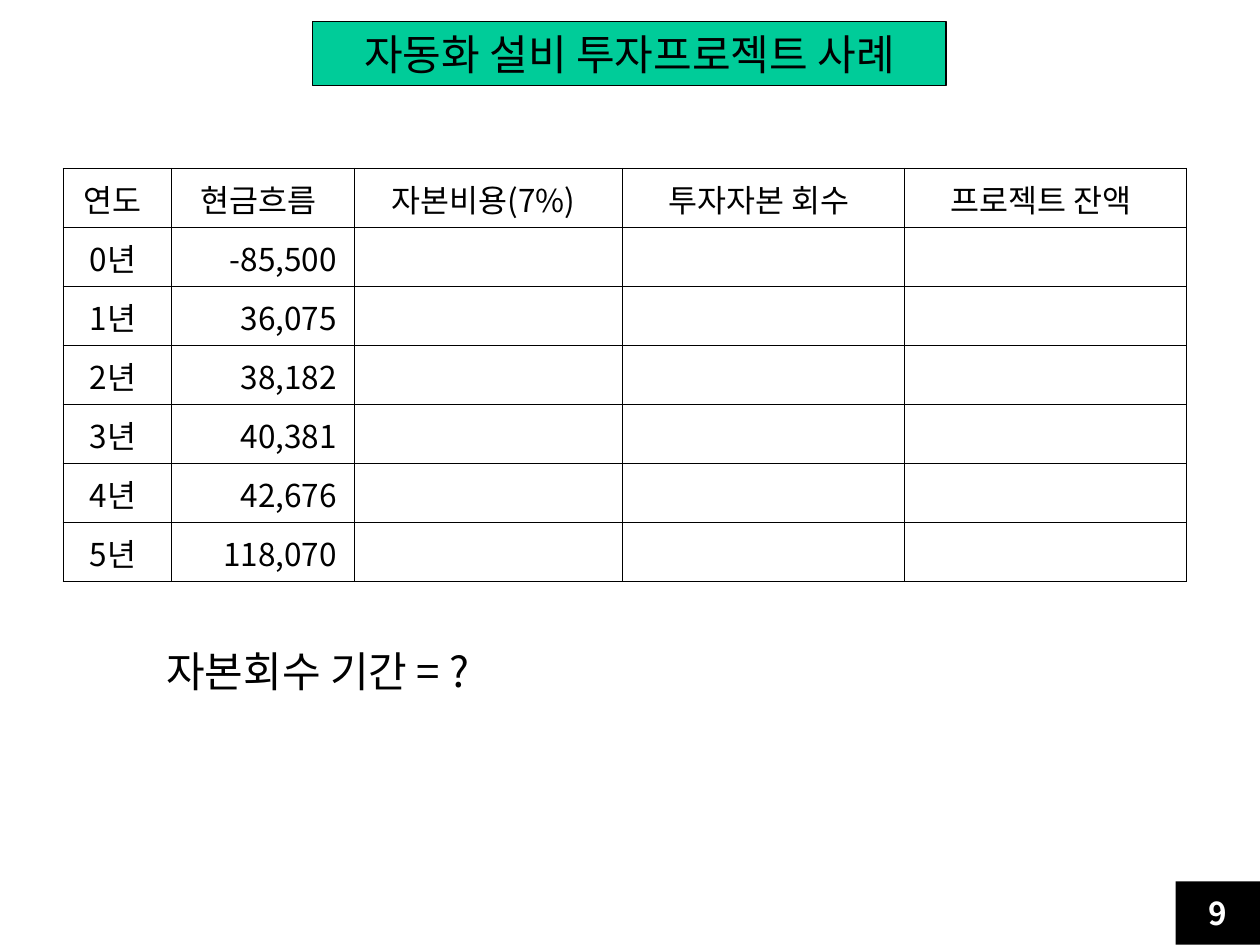
import lxml.etree
import pptx
import pptx.dml.color
import pptx.enum.shapes
import pptx.enum.text
import pptx.oxml
import pptx.oxml.ns
import pptx.util

FONT = "Noto Sans CJK KR"
ALIGN = pptx.enum.text.PP_ALIGN
MIDDLE = pptx.enum.text.MSO_ANCHOR.MIDDLE
WIDTH, HEIGHT = pptx.util.Inches(10), pptx.util.Inches(7.5)
HEADERS = ["연도", "현금흐름", "자본비용(7%)", "투자자본 회수", "프로젝트 잔액"]
COLUMN_SHARES = [0.86, 1.45, 2.13, 2.24, 2.24]
CASH_FLOWS = [-85500, 36075, 38182, 40381, 42676, 118070]


def color(hex_string):
    """Turn a hex string into a colour."""
    return pptx.dml.color.RGBColor.from_string(hex_string)


def box_at(left, top, width, height):
    """Turn shares of the slide's size into a box."""
    return tuple(int(share * side) for share, side in
                 zip((left, top, width, height), (WIDTH, HEIGHT) * 2))


def write(frame, text, size, align, hex_string="000000", bold=False):
    """Write one styled paragraph into a text frame."""
    paragraph = frame.paragraphs[0]
    paragraph.text = text
    paragraph.alignment = align
    font = paragraph.font
    font.size, font.bold, font.name = pptx.util.Pt(size), bold, FONT
    font.color.rgb = color(hex_string)
    properties = paragraph._p.pPr.find(pptx.oxml.ns.qn("a:defRPr"))
    east_asian = lxml.etree.SubElement(properties, pptx.oxml.ns.qn("a:ea"))
    east_asian.set("typeface", FONT)


def add_block(slide, box, fill, line=None):
    """Add a plain rectangle and return it."""
    shape = slide.shapes.add_shape(pptx.enum.shapes.MSO_SHAPE.RECTANGLE, *box)
    shape.shadow.inherit = False
    shape.fill.solid()
    shape.fill.fore_color.rgb = color(fill)
    if line:
        shape.line.color.rgb = color(line)
        shape.line.width = pptx.util.Pt(0.75)
    else:
        shape.line.fill.background()
    shape.text_frame.vertical_anchor = MIDDLE
    return shape


def add_title(slide, box):
    """Add the green title bar."""
    frame = add_block(slide, box, "00CC99", "000000").text_frame
    frame.word_wrap = False
    write(frame, "자동화 설비 투자프로젝트 사례", 24, ALIGN.CENTER)


def style_cell(cell):
    """Give a cell thin black borders, narrow margins and no fill."""
    cell.fill.background()
    cell.vertical_anchor = MIDDLE
    cell.margin_left = cell.margin_top = pptx.util.Inches(0.01)
    cell.margin_right, cell.margin_bottom = pptx.util.Inches(0.08), 0
    properties = cell._tc.get_or_add_tcPr()
    for index, side in enumerate(("lnL", "lnR", "lnT", "lnB")):
        border = pptx.oxml.parse_xml(
            f'<a:{side} {pptx.oxml.ns.nsdecls("a")} w="{pptx.util.Pt(0.5)}">'
            f'<a:solidFill><a:srgbClr val="000000"/></a:solidFill></a:{side}>')
        properties.insert(index, border)


def add_cash_flow_table(slide, box):
    """Add the yearly cash flow table with its blank working columns."""
    rows = [HEADERS] + [[f"{year}년", f"{flow:,} ", "", "", ""]
                        for year, flow in enumerate(CASH_FLOWS)]
    table = slide.shapes.add_table(len(rows), len(HEADERS), *box).table
    table.first_row = table.horz_banding = False
    for column, share in zip(table.columns, COLUMN_SHARES):
        column.width = int(box[2] * share / sum(COLUMN_SHARES))
    for row_index, values in enumerate(rows):
        table.rows[row_index].height = box[3] // len(rows)
        for column_index, text in enumerate(values):
            cell = table.cell(row_index, column_index)
            style_cell(cell)
            if text:
                is_amount = row_index > 0 and column_index == 1
                align = ALIGN.RIGHT if is_amount else ALIGN.CENTER
                write(cell.text_frame, text, 18, align)


def add_question(slide, box):
    """Add the payback period question."""
    frame = slide.shapes.add_textbox(*box).text_frame
    frame.word_wrap = False
    write(frame, "자본회수 기간 = ?", 24, ALIGN.LEFT)


def add_page_number(slide, box):
    """Add the black page number block."""
    frame = add_block(slide, box, "000000").text_frame
    write(frame, "9", 18, ALIGN.CENTER, "FFFFFF", bold=True)


def main():
    """Build and save the slide."""
    presentation = pptx.Presentation()
    presentation.slide_width, presentation.slide_height = WIDTH, HEIGHT
    slide = presentation.slides.add_slide(presentation.slide_layouts[6])
    add_title(slide, box_at(0.248, 0.0227, 0.503, 0.068))
    add_cash_flow_table(slide, box_at(0.05, 0.178, 0.892, 0.4375))
    add_question(slide, box_at(0.122, 0.677, 0.295, 0.067))
    add_page_number(slide, box_at(0.933, 0.9327, 0.067, 0.067))
    presentation.save("out.pptx")


if __name__ == "__main__":
    main()
